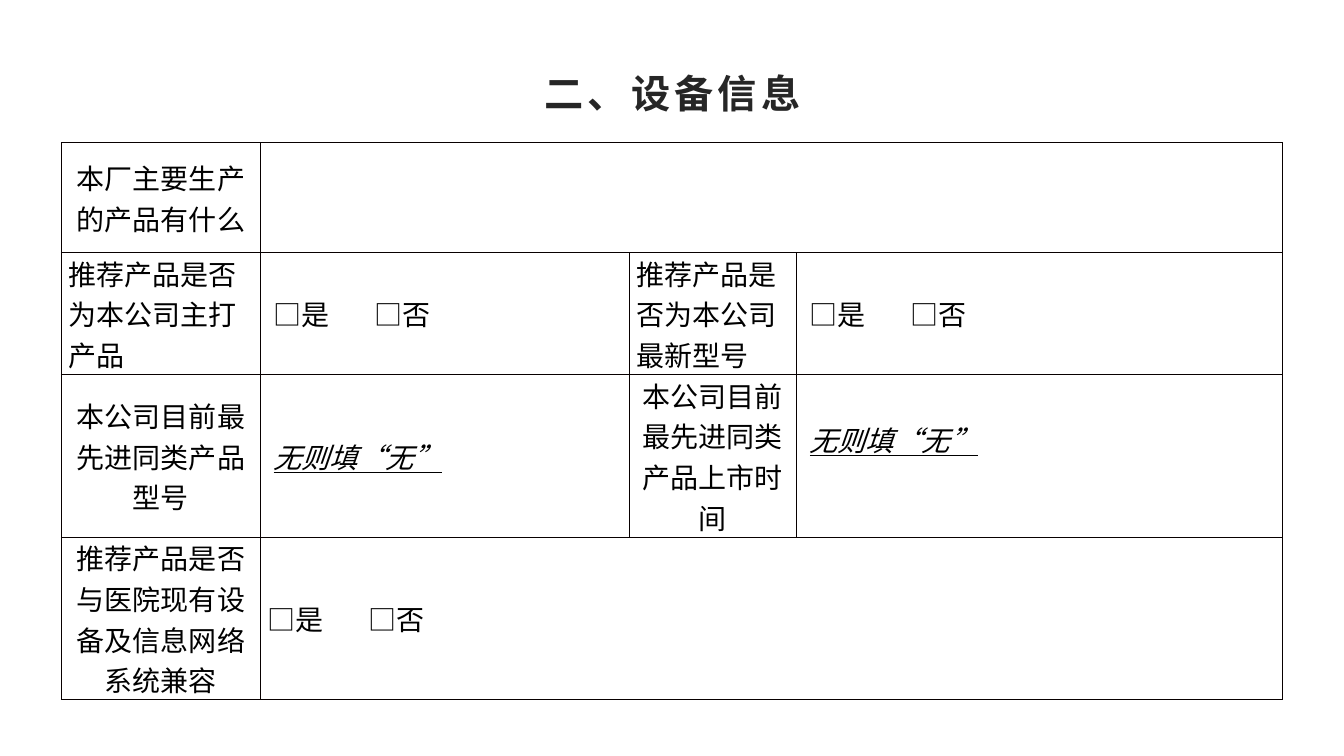
from dataclasses import dataclass

from lxml import etree
from pptx import Presentation
from pptx.dml.color import RGBColor
from pptx.enum.lang import MSO_LANGUAGE_ID
from pptx.enum.text import MSO_ANCHOR, MSO_AUTO_SIZE, PP_ALIGN
from pptx.oxml.ns import qn
from pptx.table import _Cell
from pptx.util import Pt

CENTER, LEFT = PP_ALIGN.CENTER, PP_ALIGN.LEFT
MIDDLE, BOTTOM = MSO_ANCHOR.MIDDLE, MSO_ANCHOR.BOTTOM
NO_AUTOFIT = MSO_AUTO_SIZE.NONE
CHINESE = MSO_LANGUAGE_ID.SIMPLIFIED_CHINESE

BLACK = RGBColor(0x00, 0x00, 0x00)
BORDER = RGBColor(0x08, 0x00, 0x00)
TITLE_GREY = RGBColor(0x26, 0x26, 0x26)

CJK_FONT = "Noto Sans CJK SC"
LABEL_FONT = "Times New Roman"
HINT_FONT = "Calibri"
COLUMN_WIDTHS = (142, 263.5, 119.5, 347)
ROW_HEIGHTS = (78.5, 72, 96, 80.5)
CHOICE_TAB = 67
ANSWER_INDENT = 4.5
YES_NO = "□是\t□否"
FILL_HINT = "无则填“无”"


@dataclass(frozen=True)
class Entry:
    row: int
    column: int
    text: str
    font: str = LABEL_FONT
    align: PP_ALIGN = CENTER
    indent: float = 0
    hint: bool = False
    bottom: float = 0


ENTRIES = (
    Entry(0, 0, "本厂主要生产的产品有什么"),
    Entry(1, 0, "推荐产品是否为本公司主打产品", align=LEFT),
    Entry(1, 1, YES_NO, CJK_FONT, LEFT, ANSWER_INDENT),
    Entry(1, 2, "推荐产品是否为本公司最新型号", align=LEFT),
    Entry(1, 3, YES_NO, CJK_FONT, LEFT, ANSWER_INDENT),
    Entry(2, 0, "本公司目前最先进同类产品型号"),
    Entry(2, 1, FILL_HINT, HINT_FONT, LEFT, ANSWER_INDENT, True),
    Entry(2, 2, "本公司目前最先进同类产品上市时间"),
    Entry(2, 3, FILL_HINT, HINT_FONT, LEFT, ANSWER_INDENT, True, 24),
    Entry(3, 0, "推荐产品是否与医院现有设备及信息网络系统兼容"),
    Entry(3, 1, YES_NO, CJK_FONT, LEFT),
)


def outline_cell(cell: _Cell) -> None:
    cell.fill.background()
    properties = cell._tc.get_or_add_tcPr()
    for position, side in enumerate(("lnL", "lnR", "lnT", "lnB")):
        line = etree.Element(qn(f"a:{side}"), w=str(Pt(1)))
        fill = etree.SubElement(line, qn("a:solidFill"))
        etree.SubElement(fill, qn("a:srgbClr"), val=str(BORDER))
        properties.insert(position, line)


def write_entry(cell: _Cell, entry: Entry) -> None:
    cell.text = entry.text
    cell.margin_bottom = Pt(entry.bottom)
    paragraph = cell.text_frame.paragraphs[0]
    paragraph.alignment = entry.align
    properties = paragraph._p.get_or_add_pPr()
    properties.set("marL", str(Pt(entry.indent)))
    properties.set("indent", "0")
    if "\t" in entry.text:
        tabs = etree.SubElement(properties, qn("a:tabLst"))
        etree.SubElement(tabs, qn("a:tab"), pos=str(Pt(CHOICE_TAB)), algn="l")
    font = paragraph.font
    font.size = Pt(20)
    font.name = entry.font
    font.color.rgb = BLACK
    font.language_id = CHINESE
    if entry.hint:
        font.italic = True
        font.underline = True
    etree.SubElement(properties.find(qn("a:defRPr")), qn("a:ea"), typeface=CJK_FONT)


def main() -> None:
    presentation = Presentation()
    presentation.slide_width, presentation.slide_height = Pt(960), Pt(540)
    slide = presentation.slides.add_slide(presentation.slide_layouts[5])

    heading = slide.shapes.title
    heading.left, heading.top = Pt(149), Pt(15)
    heading.width, heading.height = Pt(662.5), Pt(72)
    heading.text_frame.text = "二、设备信息"
    heading.text_frame.vertical_anchor = BOTTOM
    heading.text_frame.auto_size = NO_AUTOFIT
    paragraph = heading.text_frame.paragraphs[0]
    paragraph.alignment = CENTER
    font = paragraph.font
    font.size = Pt(28)
    font.name = "Arial"
    font.bold = True
    font.color.rgb = TITLE_GREY
    font.language_id = CHINESE
    title_style = paragraph._p.pPr.find(qn("a:defRPr"))
    title_style.set("spc", "300")
    etree.SubElement(title_style, qn("a:ea"), typeface=CJK_FONT)

    device_table = slide.shapes.add_table(
        len(ROW_HEIGHTS), len(COLUMN_WIDTHS), Pt(44), Pt(102),
        Pt(sum(COLUMN_WIDTHS)), Pt(sum(ROW_HEIGHTS)),
    ).table
    device_table.first_row = False
    device_table.horz_banding = False
    for column, width in zip(device_table.columns, COLUMN_WIDTHS):
        column.width = Pt(width)
    for row, height in zip(device_table.rows, ROW_HEIGHTS):
        row.height = Pt(height)
    for cell in device_table.iter_cells():
        outline_cell(cell)
        cell.vertical_anchor = MIDDLE
        cell.margin_left = cell.margin_right = Pt(5)
        cell.margin_top = cell.margin_bottom = 0
    for row_index in (0, 3):
        device_table.cell(row_index, 1).merge(device_table.cell(row_index, 3))
    for entry in ENTRIES:
        write_entry(device_table.cell(entry.row, entry.column), entry)

    presentation.save("out.pptx")


if __name__ == "__main__":
    main()
